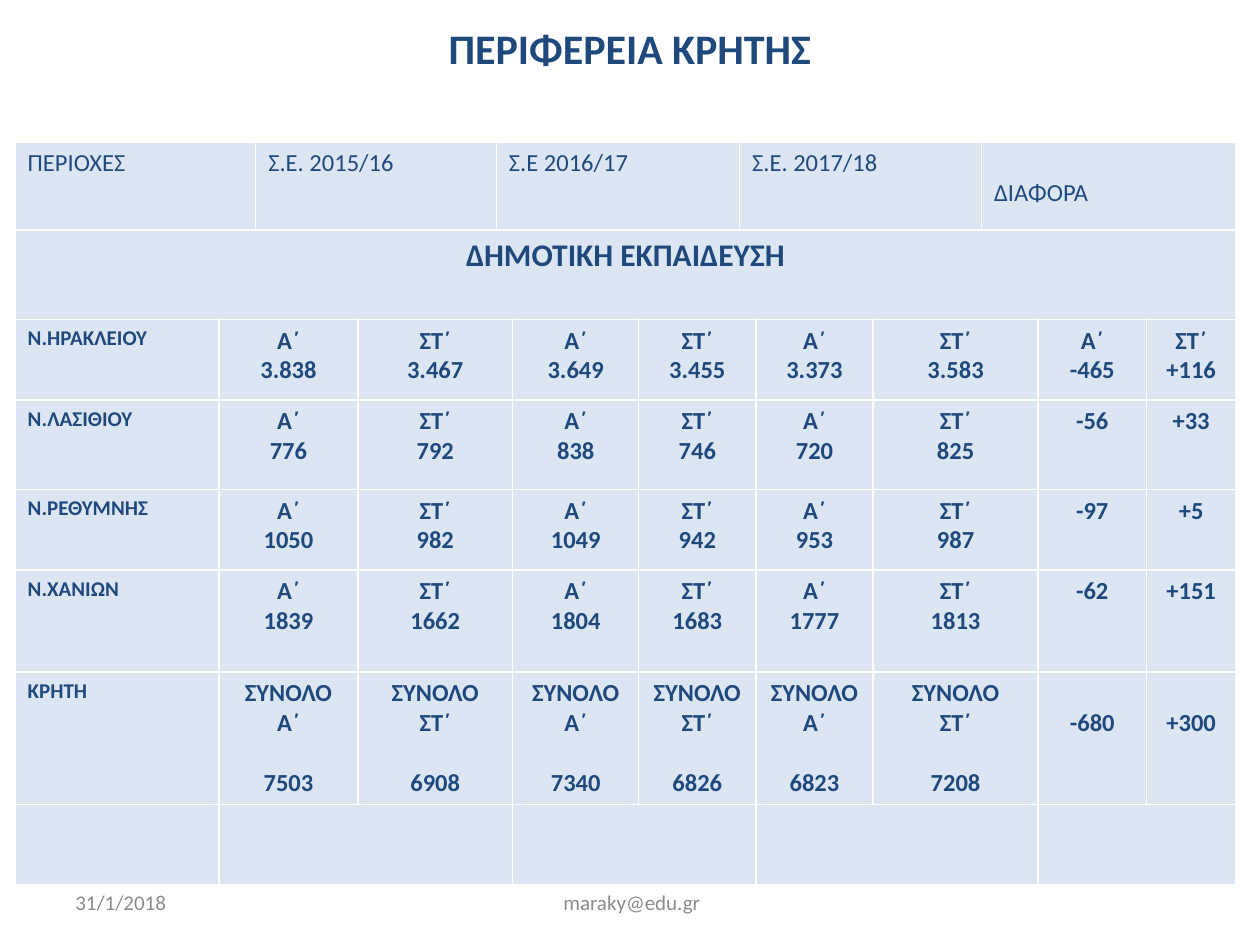
from lxml import etree
from pptx import Presentation
from pptx import util as u
from pptx.dml.color import RGBColor
from pptx.enum import text
from pptx.oxml import ns

NAVY = RGBColor(0x1F, 0x49, 0x7D)
PALE = RGBColor(0xDC, 0xE6, 0xF2)
GRAY = RGBColor(0x8C, 0x8C, 0x8C)
WHITE = RGBColor(0xFF, 0xFF, 0xFF)
FONT = "Calibri"
LEFT, MID = text.PP_ALIGN.LEFT, text.PP_ALIGN.CENTER
WIDE, HIGH = u.Inches(10), u.Inches(7.5)

COLS = [1.62, 0.29, 0.81, 1.1, 0.13, 1, 0.8, 0.13, 0.93, 0.86, 0.45, 0.86, 0.71]
ROWS = [0.7, 0.71, 0.64, 0.71, 0.64, 0.81, 1.05, 0.64]
HEAD, BODY, FOOT = [2, 2, 3, 3, 3], [1, 2, 2, 1, 2, 1, 2, 1, 1], [1, 4, 3, 3, 2]
SPANS = [HEAD, [13]] + [BODY] * 5 + [FOOT]
YEARS = ["ΠΕΡΙΟΧΕΣ", "Σ.Ε. 2015/16", "Σ.Ε 2016/17", "Σ.Ε. 2017/18", "ΔΙΑΦΟΡΑ"]
AREAS = [
    ("Ν.ΗΡΑΚΛΕΙΟΥ", "3.838 3.467 3.649 3.455 3.373 3.583 -465 +116"),
    ("Ν.ΛΑΣΙΘΙΟΥ", "776 792 838 746 720 825 -56 +33"),
    ("Ν.ΡΕΘΥΜΝΗΣ", "1050 982 1049 942 953 987 -97 +5"),
    ("Ν.ΧΑΝΙΩΝ", "1839 1662 1804 1683 1777 1813 -62 +151"),
    ("ΚΡΗΤΗ", "7503 6908 7340 6826 6823 7208 -680 +300"),
]
LINE = u.Pt(17)


def share(x, y, w, h):
    return [int(x * WIDE), int(y * HIGH), int(w * WIDE), int(h * HIGH)]


def write(frame, lines, size, color, bold=False, align=LEFT):
    for i, line in enumerate(lines):
        para = frame.paragraphs[0] if i == 0 else frame.add_paragraph()
        para.text, para.alignment = line, align
        font = para.font
        font.name, font.size, font.bold = FONT, u.Pt(size), bold
        font.color.rgb = color


def label(slide, box, line, size, color, bold=False, align=LEFT):
    frame = slide.shapes.add_textbox(*box).text_frame
    frame.word_wrap = True
    frame.vertical_anchor = text.MSO_ANCHOR.MIDDLE
    write(frame, [line], size, color, bold, align)


def paint(cell):
    cell.fill.solid()
    cell.fill.fore_color.rgb = PALE
    props = cell._tc.get_or_add_tcPr()
    for i, side in enumerate("LRTB"):
        edge = etree.Element(ns.qn(f"a:ln{side}"), w=str(u.Pt(1)))
        fill = etree.SubElement(edge, ns.qn("a:solidFill"))
        etree.SubElement(fill, ns.qn("a:srgbClr"), val=str(WHITE))
        props.insert(i, edge)


def merge(grid, row, spans):
    cells, start = [], 0
    for span in spans:
        cell = grid.cell(row, start)
        if span > 1:
            cell.merge(grid.cell(row, start + span - 1))
        cells.append(cell)
        start += span
    return cells


def lower(cell):
    cell.margin_top = u.Inches(0.05) + LINE


def area(cells, name, values, first, total):
    write(cells[0].text_frame, [name], 12, NAVY, True)
    for i, (cell, value) in enumerate(zip(cells[1:], values.split())):
        lines = [value]
        if i < 6 or first:
            lines.insert(0, ("Α΄", "ΣΤ΄")[i % 2])
        if total and i < 6:
            lines.insert(0, "ΣΥΝΟΛΟ")
        write(cell.text_frame, lines, 14, NAVY, True, MID)
        if total and i < 6:
            cell.text_frame.paragraphs[-1].space_before = LINE
        elif total:
            lower(cell)


def table(slide, box):
    grid = slide.shapes.add_table(len(ROWS), len(COLS), *box).table
    grid.first_row = grid.horz_banding = False
    for col, size in zip(grid.columns, COLS):
        col.width = int(box[2] * size / sum(COLS))
    for row, size in zip(grid.rows, ROWS):
        row.height = int(box[3] * size / sum(ROWS))
    for cell in grid.iter_cells():
        paint(cell)
    rows = [merge(grid, i, spans) for i, spans in enumerate(SPANS)]
    for cell, year in zip(rows[0], YEARS):
        write(cell.text_frame, [year], 14, NAVY)
    lower(rows[0][-1])
    write(rows[1][0].text_frame, ["ΔΗΜΟΤΙΚΗ ΕΚΠΑΙΔΕΥΣΗ"], 18, NAVY, True, MID)
    last = len(AREAS) - 1
    for i, (name, values) in enumerate(AREAS):
        area(rows[i + 2], name, values, i == 0, i == last)


def footer(slide, box):
    x, y, w, h = box
    label(slide, [x, y, int(w * 0.38), h], "31/1/2018", 12, GRAY)
    label(slide, [x + int(w * 0.48), y, int(w * 0.52), h],
          "maraky@edu.gr", 12, GRAY, align=MID)


def main():
    deck = Presentation()
    deck.slide_width, deck.slide_height = WIDE, HIGH
    slide = deck.slides.add_slide(deck.slide_layouts[6])
    label(slide, share(0.05, 0.01, 0.9, 0.08), "ΠΕΡΙΦΕΡΕΙΑ ΚΡΗΤΗΣ", 24, NAVY, True, MID)
    table(slide, share(0.012, 0.15, 0.969, sum(ROWS) / 7.5))
    footer(slide, share(0.05, 0.93, 0.61, 0.05))
    deck.save("out.pptx")


if __name__ == "__main__":
    main()
